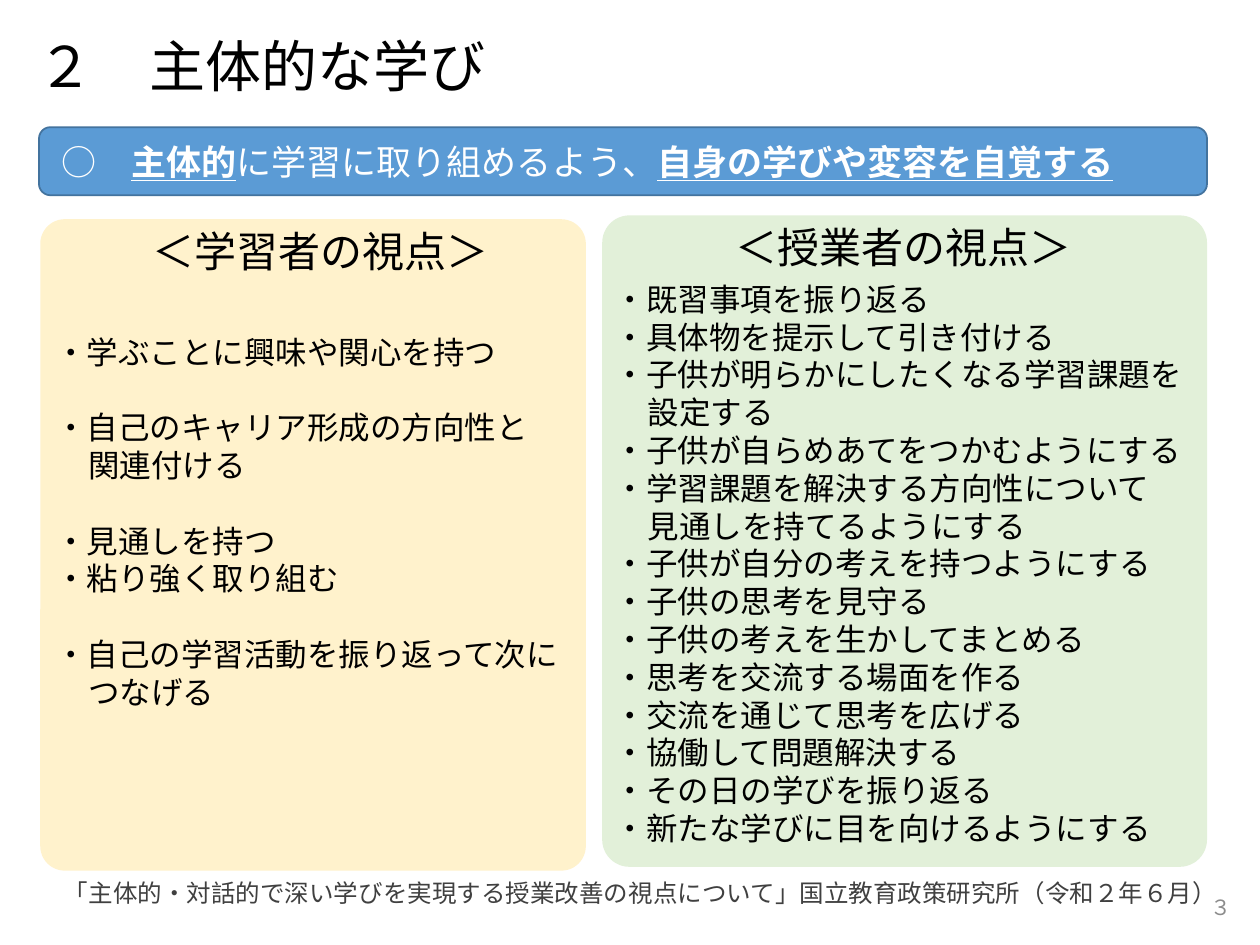
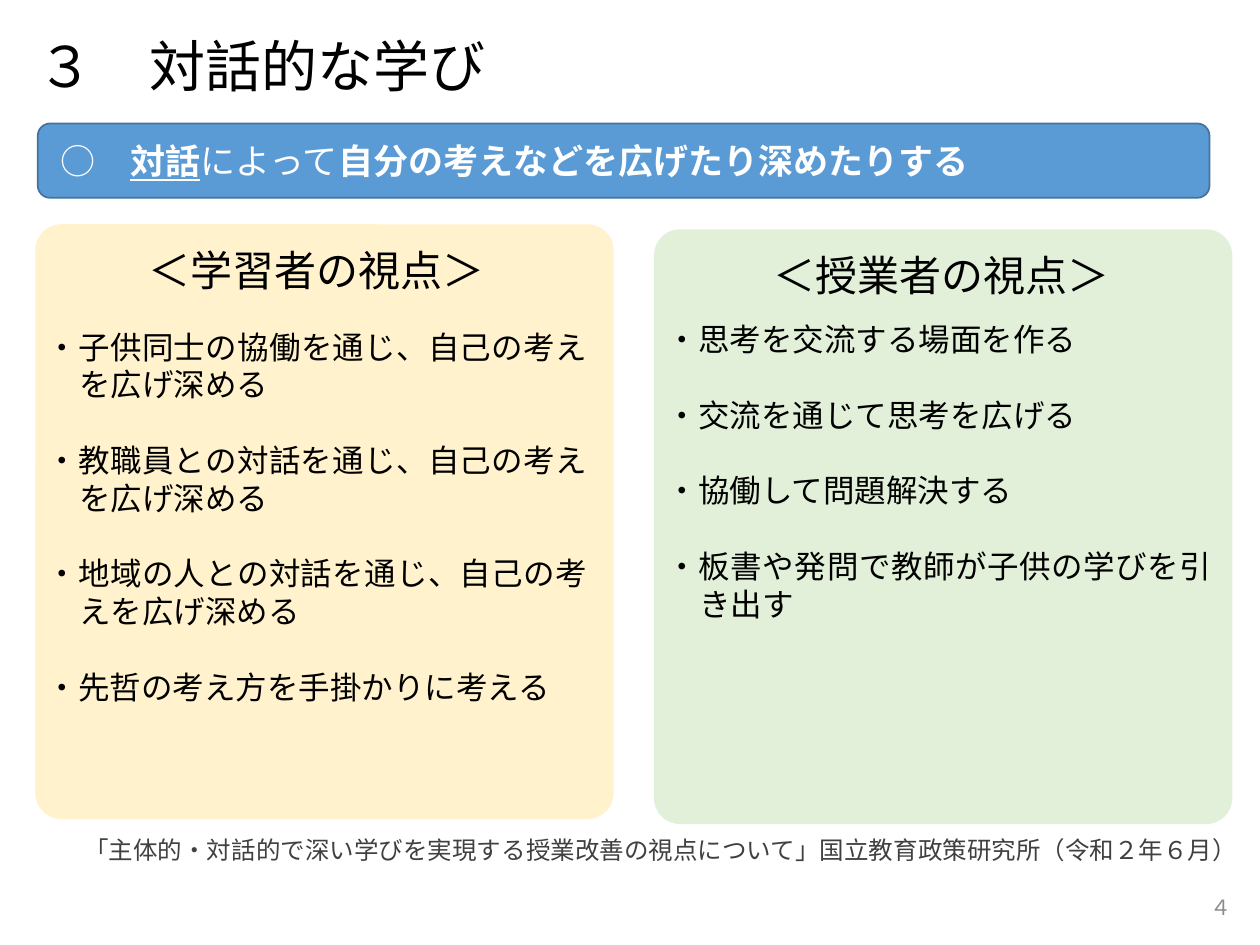
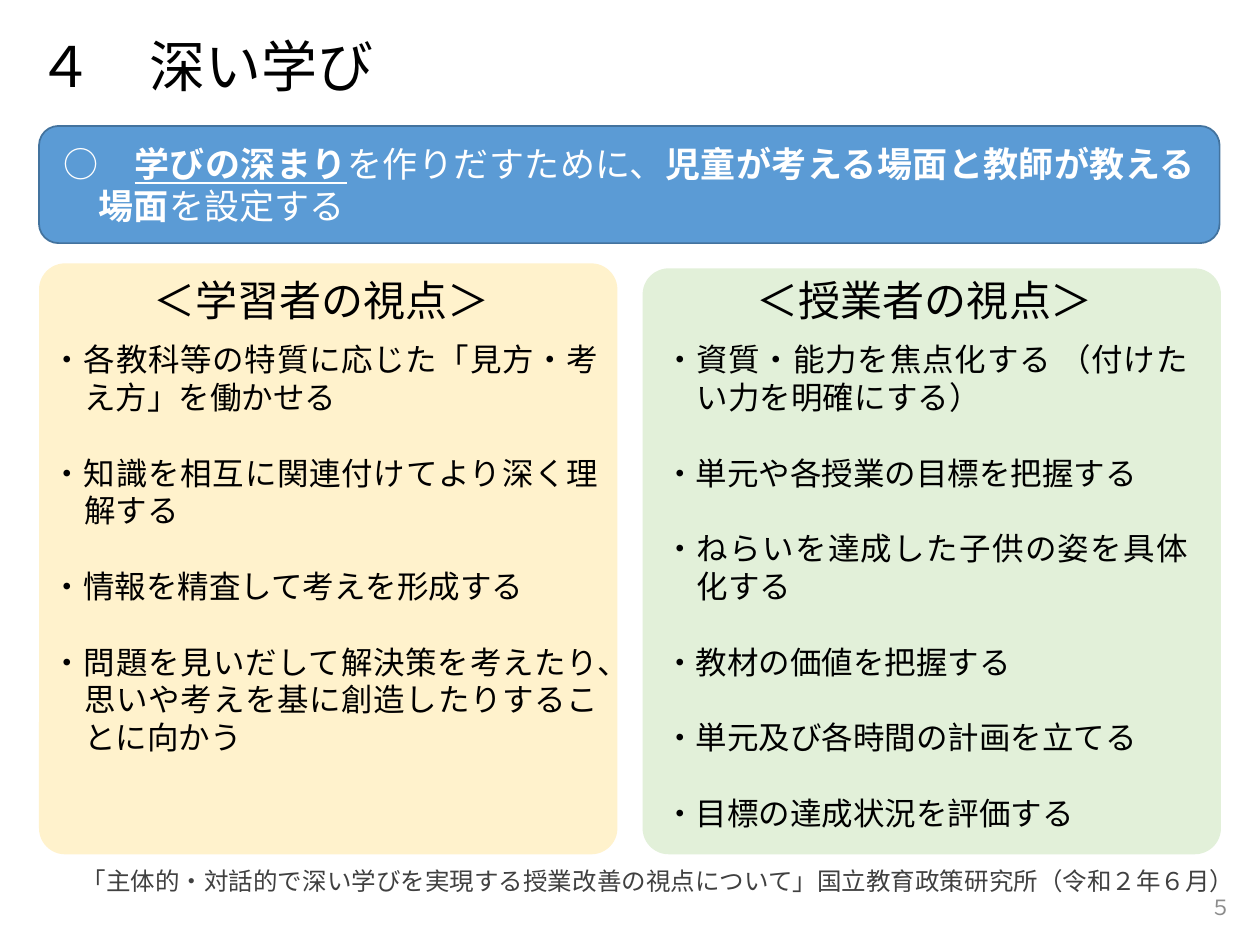
"""Builds three slides that set learner and teacher views of learning side by side."""
from dataclasses import dataclass

from pptx import Presentation
from pptx.dml.color import RGBColor
from pptx.enum.shapes import MSO_SHAPE
from pptx.enum.text import MSO_ANCHOR, MSO_AUTO_SIZE, PP_ALIGN
from pptx.oxml.ns import qn
from pptx.util import Inches, Pt

ROUNDED = MSO_SHAPE.ROUNDED_RECTANGLE
TOP, MIDDLE = MSO_ANCHOR.TOP, MSO_ANCHOR.MIDDLE
LEFT, RIGHT, JUSTIFY = PP_ALIGN.LEFT, PP_ALIGN.RIGHT, PP_ALIGN.JUSTIFY
NO_AUTOFIT = MSO_AUTO_SIZE.NONE


@dataclass(frozen=True)
class Theme:
    """Font, colours, type sizes and spacing shared by all slides."""
    font: str = "Noto Sans CJK JP"
    ink: str = "000000"
    white: str = "FFFFFF"
    source_ink: str = "404040"
    number_ink: str = "8C8C8C"
    band: str = "5B9BD5"
    band_line: str = "43739E"
    panels: tuple = ("FFF2CC", "E2F0D9")
    title: int = 32
    heading: int = 24
    band_text: int = 20
    body: int = 18
    source: int = 14
    number: int = 12
    leading: float = 1.2
    panel_corner: float = 0.045
    hang: float = 0.26
    band_hang: float = 0.28
    band_inset: float = 0.15


THEME = Theme()
SLIDE_SIZE = (10, 7.5)
TITLE_BOX = (0.2, 0.2, 9.59, 0.64)
NUMBER_BOX = (7.62, 7, 2.25, 0.4)
HEADING_SIZE = (2.97, 0.5)
SOURCE_HEIGHT = 0.48
HEADINGS = ("＜学習者の視点＞", "＜授業者の視点＞")
SOURCE = "「主体的・対話的で深い学びを実現する授業改善の視点について」国立教育政策研究所（令和２年６月）"

SLIDES = [
    {
        "title": "２　主体的な学び",
        "number": "３",
        "align": LEFT,
        "band_box": (0.31, 1.01, 9.27, 0.54),
        "band": [("○　", ""), ("主体的", "bu"), ("に学習に取り組めるよう、", ""),
                 ("自身の学びや変容を自覚する", "bu")],
        "source_at": (0.36, 6.92),
        "panels": [
            {
                "box": (0.32, 1.74, 4.33, 5.17),
                "heading_at": (1.11, 1.74),
                "body_box": (0.34, 2.59, 4.31, 3.13),
                "groups": [
                    ["学ぶことに興味や関心を持つ"],
                    ["自己のキャリア形成の方向性と\v関連付ける"],
                    ["見通しを持つ", "粘り強く取り組む"],
                    ["自己の学習活動を振り返って次につなげる"],
                ],
            },
            {
                "box": (4.78, 1.71, 4.8, 5.17),
                "heading_at": (5.74, 1.71),
                "body_box": (4.78, 2.17, 4.93, 4.95),
                "groups": [[
                    "既習事項を振り返る",
                    "具体物を提示して引き付ける",
                    "子供が明らかにしたくなる学習課題を\v設定する",
                    "子供が自らめあてをつかむようにする",
                    "学習課題を解決する方向性について\v見通しを持てるようにする",
                    "子供が自分の考えを持つようにする",
                    "子供の思考を見守る",
                    "子供の考えを生かしてまとめる",
                    "思考を交流する場面を作る",
                    "交流を通じて思考を広げる",
                    "協働して問題解決する",
                    "その日の学びを振り返る",
                    "新たな学びに目を向けるようにする",
                ]],
            },
        ],
    },
    {
        "title": "３　対話的な学び",
        "number": "４",
        "align": JUSTIFY,
        "band_box": (0.3, 0.98, 9.3, 0.59),
        "band": [("○　", ""), ("対話", "bu"), ("によって", ""),
                 ("自分の考えなどを広げたり深めたりする", "b")],
        "source_at": (0.52, 6.58),
        "panels": [
            {
                "box": (0.28, 1.78, 4.59, 4.72),
                "heading_at": (1.08, 1.89),
                "body_box": (0.27, 2.55, 4.49, 3.13),
                "groups": [
                    ["子供同士の協働を通じ、自己の考えを広げ深める"],
                    ["教職員との対話を通じ、自己の考えを広げ深める"],
                    ["地域の人との対話を通じ、自己の考えを広げ深める"],
                    ["先哲の考え方を手掛かりに考える"],
                ],
            },
            {
                "box": (5.19, 1.82, 4.59, 4.72),
                "heading_at": (6.04, 1.93),
                "body_box": (5.19, 2.49, 4.53, 2.52),
                "groups": [
                    ["思考を交流する場面を作る"],
                    ["交流を通じて思考を広げる"],
                    ["協働して問題解決する"],
                    ["板書や発問で教師が子供の学びを引き出す"],
                ],
            },
        ],
    },
    {
        "title": "４　深い学び",
        "number": "５",
        "align": JUSTIFY,
        "band_box": (0.31, 1, 9.37, 0.93),
        "band": [("○　", ""), ("学びの深まり", "bu"), ("を作りだすために、", ""),
                 ("児童が考える場面と教師が教える場面", "b"), ("を設定する", "")],
        "source_at": (0.5, 6.82),
        "panels": [
            {
                "box": (0.31, 2.09, 4.59, 4.69),
                "heading_at": (1.12, 2.13),
                "body_box": (0.31, 2.65, 4.54, 3.43),
                "groups": [
                    ["各教科等の特質に応じた「見方・考え方」を働かせる"],
                    ["知識を相互に関連付けてより深く理解する"],
                    ["情報を精査して考えを形成する"],
                    ["問題を見いだして解決策を考えたり、思いや考えを基に創造したりすることに向かう"],
                ],
            },
            {
                "box": (5.1, 2.13, 4.59, 4.65),
                "heading_at": (5.91, 2.13),
                "body_box": (5.17, 2.65, 4.36, 4.04),
                "groups": [
                    ["資質・能力を焦点化する （付けたい力を明確にする）"],
                    ["単元や各授業の目標を把握する"],
                    ["ねらいを達成した子供の姿を具体化する"],
                    ["教材の価値を把握する"],
                    ["単元及び各時間の計画を立てる"],
                    ["目標の達成状況を評価する"],
                ],
            },
        ],
    },
]


def place(shape, box):
    """Moves and sizes a shape in inches."""
    shape.left, shape.top, shape.width, shape.height = map(Inches, box)


def format_span(span, size, color):
    """Sets font, size and colour, for Latin and East Asian text alike."""
    span.font.size = Pt(size)
    span.font.color.rgb = RGBColor.from_string(color)
    span.font.name = THEME.font
    east_asian = span.font._element.makeelement(qn("a:ea"), {"typeface": THEME.font})
    span.font._element.find(qn("a:latin")).addnext(east_asian)


def format_para(para, size, color, align=LEFT, margin=0, hang=0, before=0):
    """Sets the spacing, indents and runs of a paragraph."""
    para.alignment = align
    para.line_spacing = Pt(size * THEME.leading)
    para.space_before = Pt(before)
    properties = para._p.get_or_add_pPr()
    properties.set("marL", str(Inches(margin + hang)))
    properties.set("indent", str(-Inches(hang)))
    properties.append(properties.makeelement(qn("a:buNone"), {}))
    for span in para.runs:
        format_span(span, size, color)


def prepare_frame(shape, anchor=TOP):
    """Makes a text frame wrap at a fixed size and returns it."""
    frame = shape.text_frame
    frame.word_wrap = True
    frame.auto_size = NO_AUTOFIT
    frame.vertical_anchor = anchor
    return frame


def fill_line(shape, text, size, color, anchor=TOP, **layout):
    """Writes one formatted paragraph into a shape."""
    frame = prepare_frame(shape, anchor)
    frame.text = text
    format_para(frame.paragraphs[0], size, color, **layout)
    return frame


def add_text(slide, box, text, size, color, **layout):
    """Adds a text box of one paragraph."""
    return fill_line(slide.shapes.add_textbox(*map(Inches, box)), text, size, color, **layout)


def add_rounded(slide, box, fill):
    """Adds a flat rounded rectangle without an outline."""
    shape = slide.shapes.add_shape(ROUNDED, *map(Inches, box))
    shape.shadow.inherit = False
    shape.fill.solid()
    shape.fill.fore_color.rgb = RGBColor.from_string(fill)
    shape.line.fill.background()
    return shape


def add_band(slide, box, spans):
    """Adds the blue key message band."""
    band = add_rounded(slide, box, THEME.band)
    band.line.color.rgb = RGBColor.from_string(THEME.band_line)
    band.line.width = Pt(1)
    frame = prepare_frame(band, MIDDLE)
    frame.margin_left = frame.margin_right = Inches(THEME.band_inset)
    para = frame.paragraphs[0]
    for text, style in spans:
        span = para.add_run()
        span.text = text
        span.font.bold = "b" in style
        span.font.underline = "u" in style
    format_para(para, THEME.band_text, THEME.white, JUSTIFY, hang=THEME.band_hang)


def fill_body(body, box, groups, align):
    """Writes grouped points, with one line of space between groups."""
    place(body, box)
    frame = prepare_frame(body)
    points = [(text, group > 0 and row == 0)
              for group, texts in enumerate(groups) for row, text in enumerate(texts)]
    for index, (text, starts_group) in enumerate(points):
        para = frame.add_paragraph() if index else frame.paragraphs[0]
        para.text = "・" + text
        before = THEME.body * THEME.leading if starts_group else 0
        format_para(para, THEME.body, THEME.ink, align, hang=THEME.hang, before=before)


def build_slide(deck, content):
    """Builds one slide of two viewpoints."""
    slide = deck.slides.add_slide(deck.slide_layouts.get_by_name("Two Content"))
    title, *bodies = slide.placeholders
    place(title, TITLE_BOX)
    fill_line(title, content["title"], THEME.title, THEME.ink)
    add_band(slide, content["band_box"], content["band"])
    for panel, body, heading, color in zip(content["panels"], bodies, HEADINGS, THEME.panels):
        add_rounded(slide, panel["box"], color).adjustments[0] = THEME.panel_corner
        add_text(slide, panel["heading_at"] + HEADING_SIZE, heading, THEME.heading, THEME.ink)
        fill_body(body, panel["body_box"], panel["groups"], content["align"])
        body.element.getparent().append(body.element)
    left, top = content["source_at"]
    source_box = (left, top, SLIDE_SIZE[0] - left, SOURCE_HEIGHT)
    source = add_text(slide, source_box, SOURCE, THEME.source, THEME.source_ink, margin=0.05)
    source.margin_right = 0
    add_text(slide, NUMBER_BOX, content["number"], THEME.number, THEME.number_ink,
             anchor=MIDDLE, align=RIGHT)


def main():
    """Builds and saves the deck."""
    deck = Presentation()
    deck.slide_width, deck.slide_height = map(Inches, SLIDE_SIZE)
    for content in SLIDES:
        build_slide(deck, content)
    deck.save("out.pptx")


if __name__ == "__main__":
    main()
